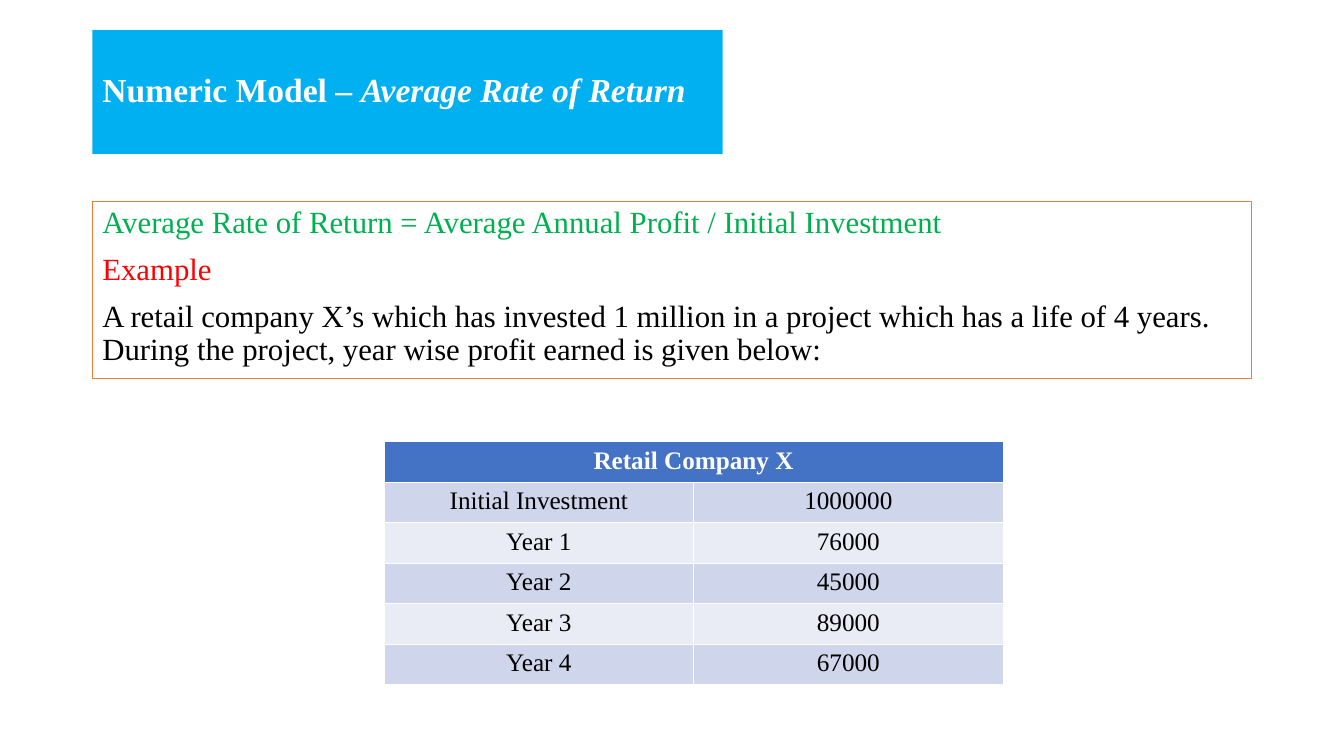
from pptx import Presentation
from pptx.dml.color import RGBColor
from pptx.enum.shapes import MSO_SHAPE
from pptx.enum.text import MSO_ANCHOR, PP_ALIGN
from pptx.util import Cm, Pt

FONT = "Times New Roman"
WHITE = RGBColor(0xFF, 0xFF, 0xFF)
BLACK = RGBColor(0x00, 0x00, 0x00)
RED = RGBColor(0xFF, 0x00, 0x00)
GREEN = RGBColor(0x00, 0xB0, 0x50)
ORANGE = RGBColor(0xED, 0x7D, 0x31)
SKY_BLUE = RGBColor(0x00, 0xB0, 0xF0)
HEADER_BLUE = RGBColor(0x44, 0x72, 0xC4)
BANDS = (RGBColor(0xCF, 0xD5, 0xEA), RGBColor(0xE9, 0xEB, 0xF5))

TITLE_PARTS = [("Numeric Model – ", False), ("Average Rate of Return", True)]
EXPLANATION = [
    ("Average Rate of Return = Average Annual Profit / Initial Investment", GREEN),
    ("Example", RED),
    ("A retail company X’s which has invested 1 million in a project which has "
     "a life of 4 years. During the project, year wise profit earned is given below:",
     BLACK),
]
TABLE_TITLE = "Retail Company X"
CASH_FLOWS = [
    ("Initial Investment", "1000000"),
    ("Year 1", "76000"),
    ("Year 2", "45000"),
    ("Year 3", "89000"),
    ("Year 4", "67000"),
]


def style_run(run, size, color, bold=False, italic=False):
    """Apply the slide's typeface and the given look to a run."""
    run.font.name = FONT
    run.font.size = Pt(size)
    run.font.color.rgb = color
    run.font.bold = bold
    run.font.italic = italic


def add_panel(slide, left, top, width, height, anchor):
    """Add a plain rectangle without shadow, ready for left-aligned text."""
    shape = slide.shapes.add_shape(MSO_SHAPE.RECTANGLE, left, top, width, height)
    shape.shadow.inherit = False
    shape.text_frame.word_wrap = True
    shape.text_frame.vertical_anchor = anchor
    return shape


def add_title(slide, left, top, width, height):
    """Add the blue title banner."""
    banner = add_panel(slide, left, top, width, height, MSO_ANCHOR.MIDDLE)
    banner.fill.solid()
    banner.fill.fore_color.rgb = SKY_BLUE
    banner.line.fill.background()
    paragraph = banner.text_frame.paragraphs[0]
    paragraph.alignment = PP_ALIGN.LEFT
    paragraph.line_spacing = 0.9
    for text, italic in TITLE_PARTS:
        run = paragraph.add_run()
        run.text = text
        style_run(run, 24, WHITE, bold=True, italic=italic)


def add_explanation(slide, left, top, width, height):
    """Add the outlined box with the formula and the example."""
    box = add_panel(slide, left, top, width, height, MSO_ANCHOR.TOP)
    box.fill.background()
    box.line.color.rgb = ORANGE
    box.line.width = Pt(0.75)
    text_frame = box.text_frame
    text_frame.text = "\n".join(text for text, _ in EXPLANATION)
    for paragraph, (_, color) in zip(text_frame.paragraphs, EXPLANATION):
        paragraph.alignment = PP_ALIGN.LEFT
        paragraph.line_spacing = 0.9
        paragraph.space_before = Pt(10)
        style_run(paragraph.runs[0], 22, color)


def fill_cell(cell, text, fill, color, bold=False):
    """Write centred text into a filled table cell."""
    cell.fill.solid()
    cell.fill.fore_color.rgb = fill
    cell.text_frame.text = text
    paragraph = cell.text_frame.paragraphs[0]
    paragraph.alignment = PP_ALIGN.CENTER
    style_run(paragraph.runs[0], 18, color, bold)


def add_cash_flow_table(slide, left, top, width, height):
    """Add the profit table with a merged header and banded rows."""
    table = slide.shapes.add_table(
        len(CASH_FLOWS) + 1, 2, left, top, width, height
    ).table
    header = table.cell(0, 0)
    header.merge(table.cell(0, 1))
    fill_cell(header, TABLE_TITLE, HEADER_BLUE, WHITE, bold=True)
    for row, values in enumerate(CASH_FLOWS, start=1):
        for column, value in enumerate(values):
            fill_cell(table.cell(row, column), value, BANDS[(row - 1) % 2], BLACK)


def main():
    """Build the slide and save the presentation."""
    presentation = Presentation()
    presentation.slide_width = Cm(33.87)
    presentation.slide_height = Cm(19.05)
    slide = presentation.slides.add_slide(presentation.slide_layouts[6])
    margin = Cm(2.33)
    add_explanation(slide, margin, Cm(5.08), Cm(29.21), Cm(4.45))
    add_title(slide, margin, Cm(0.76), Cm(15.88), Cm(3.12))
    add_cash_flow_table(slide, Cm(9.68), Cm(11.13), Cm(15.6), Cm(6.13))
    presentation.save("out.pptx")


if __name__ == "__main__":
    main()
